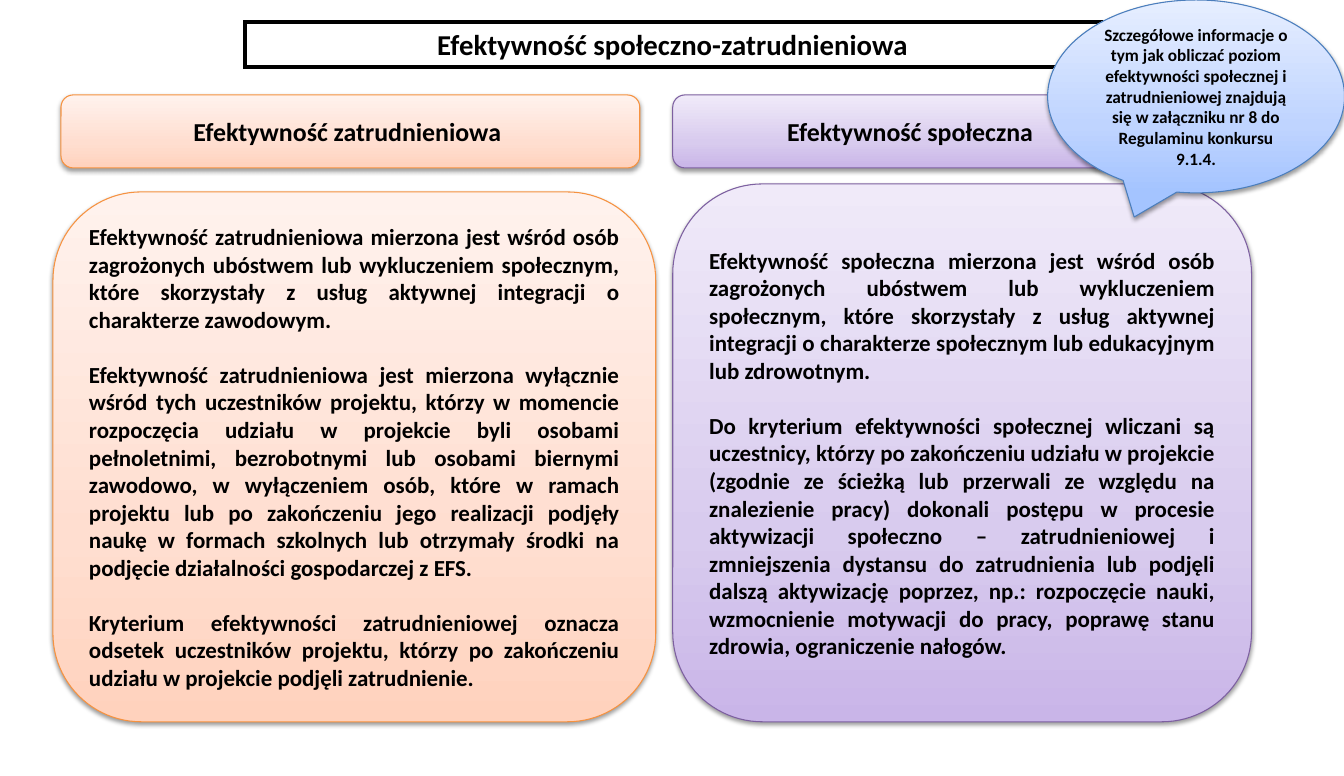
from copy import deepcopy
from dataclasses import dataclass

from lxml import etree
from pptx import Presentation
from pptx import util as u
from pptx.dml.color import RGBColor
from pptx.enum import shapes, text
from pptx.oxml.ns import qn

PX_PER_INCH = 103.5
BLACK = RGBColor(0x00, 0x00, 0x00)
STOP_POSITIONS = (0, 0.35, 1)


@dataclass(frozen=True)
class Palette:
    stops: tuple[RGBColor, RGBColor, RGBColor]
    outline: RGBColor


VIOLET = Palette((RGBColor(0xC9, 0xB5, 0xE8), RGBColor(0xD8, 0xCB, 0xEE),
                  RGBColor(0xF0, 0xEA, 0xF9)), RGBColor(0x7D, 0x60, 0xA0))
ORANGE = Palette((RGBColor(0xFF, 0xD2, 0xBD), RGBColor(0xFF, 0xDE, 0xD0),
                  RGBColor(0xFF, 0xF2, 0xED)), RGBColor(0xF6, 0x92, 0x40))
BLUE = Palette((RGBColor(0xA4, 0xC4, 0xFF), RGBColor(0xBF, 0xD4, 0xFF),
                RGBColor(0xE6, 0xEE, 0xFF)), RGBColor(0x4B, 0x7E, 0xBC))


@dataclass(frozen=True)
class Panel:
    box: tuple[int, int, int, int]
    palette: Palette
    paragraphs: tuple[str, ...]
    size: int
    align: text.PP_ALIGN = text.PP_ALIGN.CENTER
    kind: shapes.MSO_SHAPE = shapes.MSO_SHAPE.ROUNDED_RECTANGLE


PANELS = (
    Panel((673, 95, 481, 73), VIOLET, ("Efektywność społeczna ",), 18),
    Panel((61, 95, 579, 73), ORANGE, ("Efektywność zatrudnieniowa ",), 18),
    Panel((673, 184, 579, 538), VIOLET, (
        "Efektywność społeczna mierzona jest wśród osób zagrożonych ubóstwem lub "
        "wykluczeniem społecznym, które skorzystały z usług aktywnej integracji o "
        "charakterze społecznym lub edukacyjnym lub zdrowotnym.",
        "Do kryterium efektywności społecznej wliczani są uczestnicy, którzy po "
        "zakończeniu udziału w projekcie (zgodnie ze ścieżką lub przerwali ze względu "
        "na znalezienie pracy) dokonali postępu w procesie aktywizacji społeczno – "
        "zatrudnieniowej i zmniejszenia dystansu do zatrudnienia lub podjęli dalszą "
        "aktywizację poprzez, np.: rozpoczęcie nauki, wzmocnienie motywacji do pracy, "
        "poprawę stanu zdrowia, ograniczenie nałogów.",
    ), 16, text.PP_ALIGN.JUSTIFY),
    Panel((53, 192, 603, 530), ORANGE, (
        "Efektywność zatrudnieniowa mierzona jest wśród osób zagrożonych ubóstwem lub "
        "wykluczeniem społecznym, które skorzystały z usług aktywnej integracji o "
        "charakterze zawodowym.",
        "Efektywność zatrudnieniowa jest mierzona wyłącznie wśród tych uczestników "
        "projektu, którzy w momencie rozpoczęcia udziału w projekcie byli osobami "
        "pełnoletnimi, bezrobotnymi lub osobami biernymi zawodowo, w wyłączeniem osób, "
        "które w ramach projektu lub po zakończeniu jego realizacji podjęły naukę w "
        "formach szkolnych lub otrzymały środki na podjęcie działalności gospodarczej "
        "z EFS.",
        "Kryterium efektywności zatrudnieniowej oznacza odsetek uczestników projektu, "
        "którzy po zakończeniu udziału w projekcie podjęli zatrudnienie.",
    ), 16, text.PP_ALIGN.JUSTIFY),
    Panel((1048, 0, 297, 193), BLUE, (
        "Szczegółowe informacje o tym jak obliczać poziom efektywności społecznej i "
        "zatrudnieniowej znajdują się w załączniku nr 8 do Regulaminu konkursu 9.1.4.",
    ), 12, kind=shapes.MSO_SHAPE.OVAL_CALLOUT),
)


def px(length: int) -> u.Emu:
    return u.Inches(length / PX_PER_INCH)


def write(frame, paragraphs: tuple[str, ...], *, size: int,
          align=text.PP_ALIGN.CENTER, anchor=text.MSO_ANCHOR.MIDDLE) -> None:
    frame.word_wrap = True
    frame.auto_size = text.MSO_AUTO_SIZE.NONE
    frame.vertical_anchor = anchor
    for index, content in enumerate(paragraphs):
        paragraph = frame.add_paragraph() if index else frame.paragraphs[0]
        paragraph.text = content
        paragraph.alignment = align
        paragraph.space_before = u.Pt(19 if index else 0)
        font = paragraph.font
        font.name, font.size, font.bold = "Calibri", u.Pt(size), True
        font.color.rgb = BLACK


def fill_gradient(shape, colors: tuple[RGBColor, ...]) -> None:
    """Run the colours from the bottom edge to the top."""
    shape.fill.gradient()
    shape.fill.gradient_angle = 90
    stop_list = shape._element.spPr.find(".//" + qn("a:gsLst"))
    stop_list.append(deepcopy(stop_list[0]))
    for stop, color, position in zip(shape.fill.gradient_stops, colors, STOP_POSITIONS):
        stop.color.rgb = color
        stop.position = position


def add_soft_shadow(shape) -> None:
    shape.shadow.inherit = False
    effects = shape._element.spPr.find(qn("a:effectLst"))
    shadow = etree.SubElement(effects, qn("a:outerShdw"), blurRad=str(u.Pt(3.1)),
                              dist=str(u.Pt(1.6)), dir="5400000", rotWithShape="0")
    color = etree.SubElement(shadow, qn("a:srgbClr"), val=str(BLACK))
    etree.SubElement(color, qn("a:alpha"), val="38000")


def add_panel(slide, panel: Panel) -> None:
    shape = slide.shapes.add_shape(panel.kind, *map(px, panel.box))
    fill_gradient(shape, panel.palette.stops)
    shape.line.color.rgb = panel.palette.outline
    shape.line.width = u.Pt(0.75)
    add_soft_shadow(shape)
    write(shape.text_frame, panel.paragraphs, size=panel.size, align=panel.align)


def format_title(title) -> None:
    title.left, title.top, title.width, title.height = map(px, (245, 22, 862, 45))
    title.line.color.rgb = BLACK
    title.line.width = u.Pt(3)
    etree.SubElement(title._element.spPr.find(qn("a:ln")), qn("a:miter"), lim="800000")
    write(title.text_frame, ("Efektywność społeczno-zatrudnieniowa ",), size=20,
          anchor=text.MSO_ANCHOR.TOP)


def main() -> None:
    deck = Presentation()
    deck.slide_width, deck.slide_height = u.Inches(12.99), u.Inches(7.5)
    slide = deck.slides.add_slide(deck.slide_layouts.get_by_name("Title Only"))
    format_title(slide.shapes.title)
    for panel in PANELS:
        add_panel(slide, panel)
    deck.save("out.pptx")


if __name__ == "__main__":
    main()
